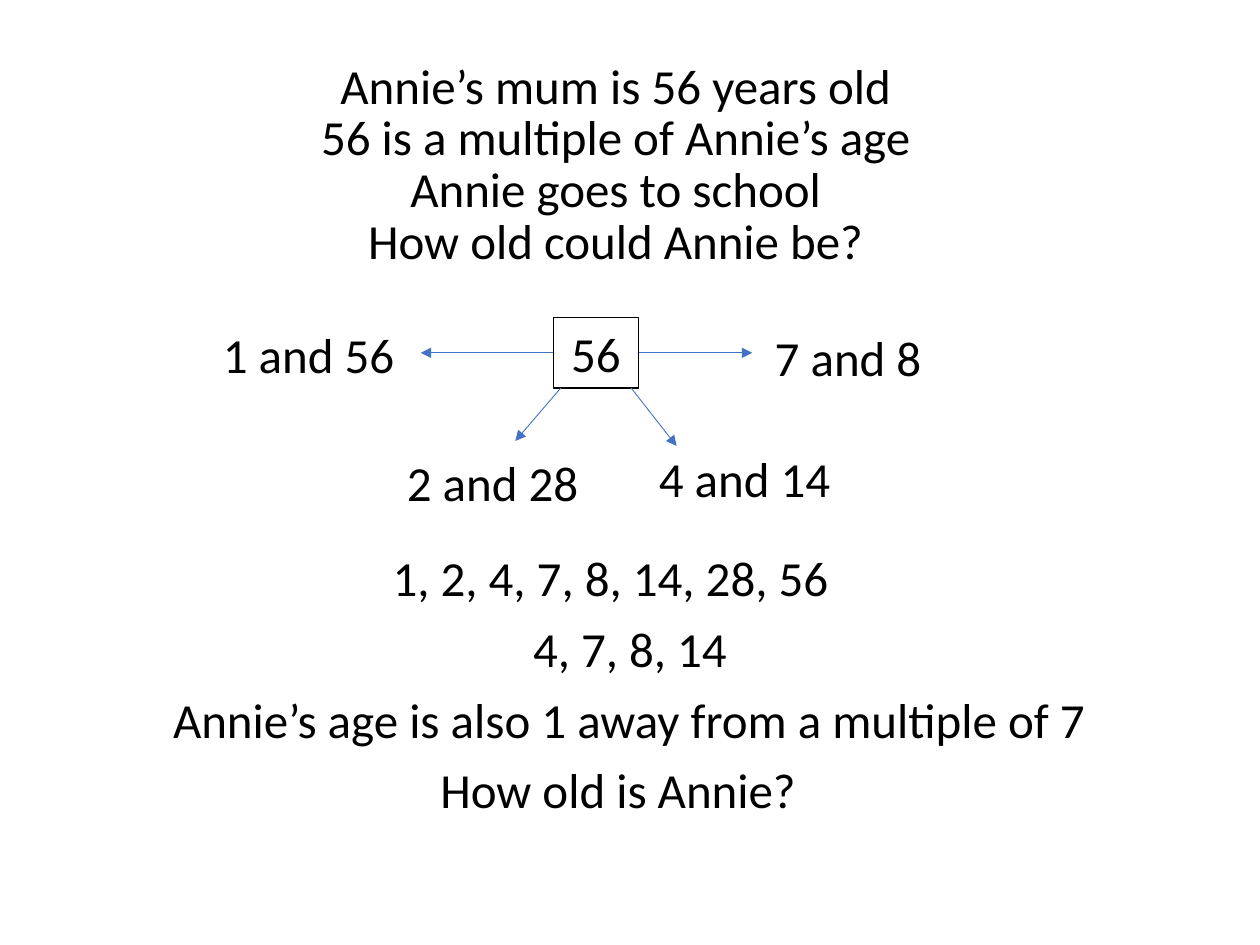
from typing import NamedTuple, Optional

from lxml import etree
from pptx import Presentation, util as u
from pptx.dml.color import RGBColor
from pptx.enum import shapes, text
from pptx.oxml.ns import qn

SCALE = 9144  # EMU per px, 100 px to the inch


class Theme(NamedTuple):
    font: str = "Calibri"
    size: int = 28
    ink: RGBColor = RGBColor(0, 0, 0)
    arrow: RGBColor = RGBColor(0x44, 0x72, 0xC4)
    frame: float = 0.75
    line: float = 0.5


class Label(NamedTuple):
    words: str
    left: int
    top: int
    width: int
    height: int = 57
    align: text.PP_ALIGN = text.PP_ALIGN.CENTER


class Arrow(NamedTuple):
    x1: int
    y1: int
    x2: int
    y2: int
    site: Optional[int] = None


THEME = Theme()
LEFT = text.PP_ALIGN.LEFT

STORY = [
    "Annie’s mum is 56 years old",
    "56 is a multiple of Annie’s age",
    "Annie goes to school",
    "How old could Annie be?",
]
STEPS = [
    ("1, 2, 4, 7, 8, 14, 28, 56", 125, 719),
    ("4, 7, 8, 14", 102, 796),
    ("Annie’s age is also 1 away from a multiple of 7", 101, 796),
    ("How old is Annie?", 131, 719),
]
NUMBER = Label("56", 439, 252, 68, 56)
PAIRS = [
    Label("1 and 56", 167, 253, 162, align=LEFT),
    Label("2 and 28", 313, 354, 168, align=LEFT),
    Label("4 and 14", 513, 351, 168, align=LEFT),
    Label("7 and 8", 605, 255, 168, align=LEFT),
]
ARROWS = [
    Arrow(439, 280, 334, 280, site=1),
    Arrow(445, 308, 409, 350),
    Arrow(501, 308, 537, 354),
    Arrow(507, 280, 597, 280, site=3),
]


def px(count: int) -> u.Emu:
    return u.Emu(count * SCALE)


def write(shape, label: Label) -> None:
    frame = shape.text_frame
    frame.word_wrap = True
    para = frame.paragraphs[0]
    para.text = label.words
    para.alignment = label.align
    para.font.name = THEME.font
    para.font.size = u.Pt(THEME.size)
    para.font.color.rgb = THEME.ink


def place(label: Label) -> tuple:
    return tuple(px(n) for n in (label.left, label.top, label.width, label.height))


def add_label(slide, label: Label) -> None:
    write(slide.shapes.add_textbox(*place(label)), label)


def add_box(slide, label: Label):
    box = slide.shapes.add_shape(shapes.MSO_SHAPE.RECTANGLE, *place(label))
    box.shadow.inherit = False
    box.fill.background()
    box.line.color.rgb = THEME.ink
    box.line.width = u.Pt(THEME.frame)
    write(box, label)
    return box


def add_arrow(slide, arrow: Arrow, box) -> None:
    """Draw an arrow, joined to the box where it starts at a side's middle."""
    ends = (px(n) for n in arrow[:4])
    line = slide.shapes.add_connector(shapes.MSO_CONNECTOR.STRAIGHT, *ends)
    if arrow.site is not None:
        line.begin_connect(box, arrow.site)
    line.line.color.rgb = THEME.arrow
    line.line.width = u.Pt(THEME.line)
    etree.SubElement(line.line._get_or_add_ln(), qn("a:tailEnd"), type="triangle")
    etree.SubElement(line._element.spPr, qn("a:effectLst"))


def main() -> None:
    deck = Presentation()
    deck.slide_width, deck.slide_height = px(1000), px(750)
    slide = deck.slides.add_slide(deck.slide_layouts[6])
    for row, words in enumerate(STORY):
        add_label(slide, Label(words, 129, 39 + 41 * row, 719))
    box = add_box(slide, NUMBER)
    for arrow in ARROWS:
        add_arrow(slide, arrow, box)
    for pair in PAIRS:
        add_label(slide, pair)
    for row, (words, left, width) in enumerate(STEPS):
        add_label(slide, Label(words, left, 430 + 56 * row, width))
    deck.save("out.pptx")


if __name__ == "__main__":
    main()
